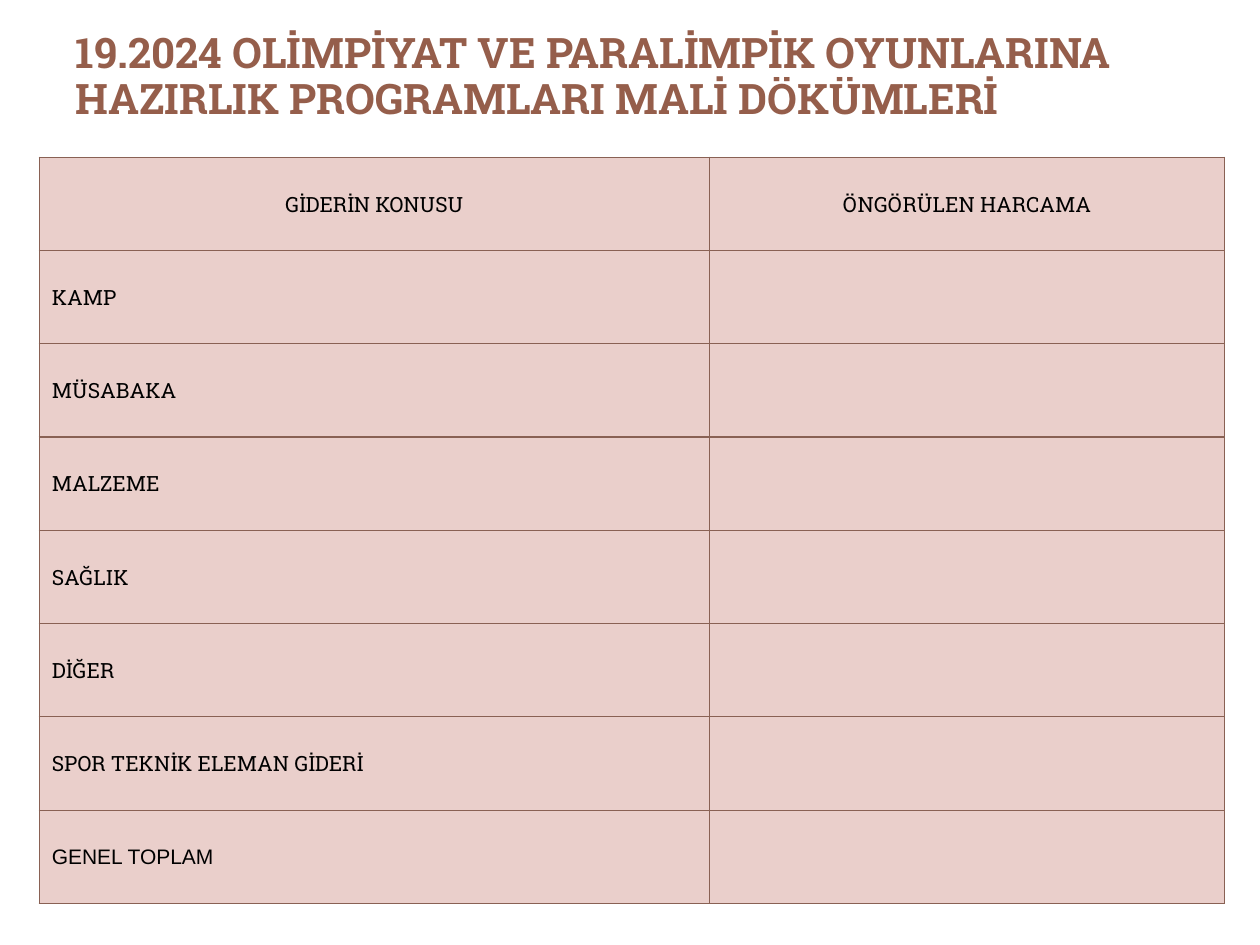
"""Build the budget table slide for the 2024 games preparation programmes."""
import pptx
import pptx.util
import pptx.dml.color
import pptx.enum.text
import pptx.oxml
import pptx.oxml.ns

Cm, Pt = pptx.util.Cm, pptx.util.Pt
RGB = pptx.dml.color.RGBColor.from_string
ALIGN = pptx.enum.text.PP_ALIGN
ANCHOR = pptx.enum.text.MSO_ANCHOR
HUES = {"title": "955E4B", "text": "000000", "fill": "EACFCB", "line": "896154"}
HEAD = ["GİDERİN KONUSU", "ÖNGÖRÜLEN HARCAMA"]
ITEMS = ["KAMP", "MÜSABAKA", "MALZEME", "SAĞLIK", "DİĞER",
         "SPOR TEKNİK ELEMAN GİDERİ", "GENEL TOPLAM"]


def style(font, hue, form):
    for name, value in form.items():
        setattr(font, name, value)
    font.color.rgb = RGB(HUES[hue])


def edge(cell):
    props = cell._tc.get_or_add_tcPr()
    for spot, side in enumerate(("lnL", "lnR", "lnT", "lnB")):
        line = pptx.oxml.parse_xml(
            f'<a:{side} {pptx.oxml.ns.nsdecls("a")} w="{Pt(0.75)}"><a:solidFill>'
            f'<a:srgbClr val="{HUES["line"]}"/></a:solidFill></a:{side}>')
        props.insert(spot, line)


deck = pptx.Presentation()
deck.slide_width, deck.slide_height = Cm(25.4), Cm(19.05)
slide = deck.slides.add_slide(deck.slide_layouts[5])

title = slide.shapes.title
place = {"left": Cm(1.27), "top": Cm(0.53), "width": Cm(22.86), "height": Cm(1.96)}
for name, value in place.items():
    setattr(title, name, value)
frame = title.text_frame
frame.text = "19.2024 OLİMPİYAT VE PARALİMPİK OYUNLARINA HAZIRLIK PROGRAMLARI MALİ DÖKÜMLERİ"
frame.word_wrap = True
frame.auto_size = pptx.enum.text.MSO_AUTO_SIZE.NONE
frame.vertical_anchor = ANCHOR.TOP
para = frame.paragraphs[0]
para.alignment = ALIGN.LEFT
para.line_spacing = 0.9
style(para.runs[0].font, "title", {"name": "Roboto Slab", "size": Pt(24), "bold": True})

rows = [HEAD] + [[item, ""] for item in ITEMS]
grid = slide.shapes.add_table(len(rows), 2, Cm(0.79), Cm(3.17), Cm(23.9), Cm(15.04)).table
for col, width in zip(grid.columns, (13.51, 10.39)):
    col.width = Cm(width)
for r, row in enumerate(rows):
    grid.rows[r].height = Cm(1.88)
    for c, text in enumerate(row):
        cell = grid.cell(r, c)
        cell.fill.solid()
        cell.fill.fore_color.rgb = RGB(HUES["fill"])
        cell.vertical_anchor = ANCHOR.MIDDLE
        edge(cell)
        cell.text = text
        para = cell.text_frame.paragraphs[0]
        para.alignment = ALIGN.CENTER if r == 0 else ALIGN.LEFT
        para.space_before = Pt(2.4)
        face = "Arial" if r == len(rows) - 1 else "Roboto Slab"
        style(para.font, "text", {"name": face, "size": Pt(12), "bold": False})
        for run in para.runs:
            style(run.font, "text", {"name": face, "size": Pt(12), "bold": False})

deck.save("out.pptx")
